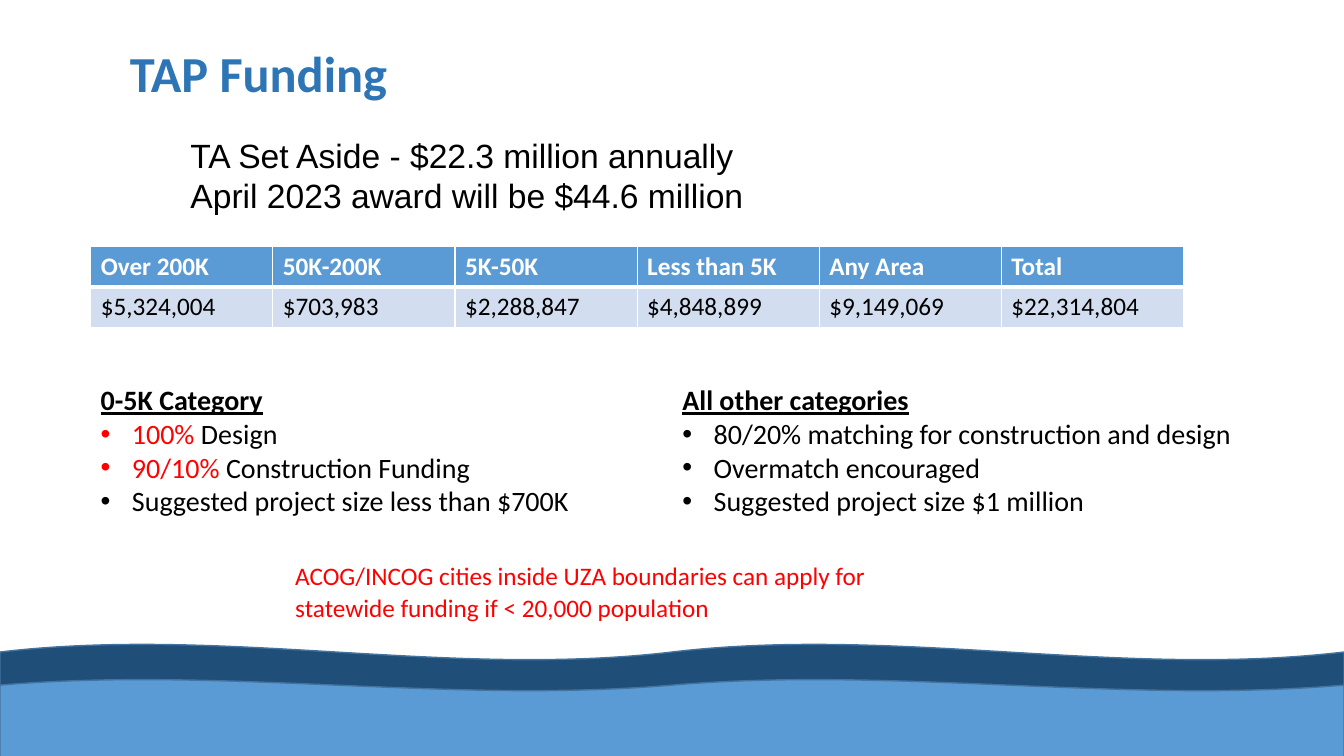
from pptx import Presentation
from pptx.dml.color import RGBColor as Rgb
from pptx.enum.shapes import MSO_SHAPE as Shape
from pptx.enum.text import MSO_ANCHOR as Anchor, MSO_AUTO_SIZE as Auto
from pptx.oxml import parse_xml
from pptx.oxml.ns import nsdecls
from pptx.util import Inches, Pt

COLORS = {
    "navy": "1F4E79", "blue": "5B9BD5", "edge": "43739E", "title": "2E75B6",
    "pale": "D2DEEF", "white": "FFFFFF", "black": "000000", "red": "FF0000",
}


class Board:
    def __init__(self, slide, face="Calibri"):
        self.slide = slide
        self.face = face

    def color(self, name):
        return Rgb.from_string(COLORS[name])

    def style(self, font, size, tint=None, bold=False, under=False, face=None):
        font.name = face or self.face
        font.size = Pt(size)
        font.bold = bold
        font.underline = under
        if tint:
            font.color.rgb = self.color(tint)

    def wave(self, top, high, fill):
        wave = self.slide.shapes.add_shape(
            Shape.DOUBLE_WAVE, 0, Inches(top), Inches(13.33), Inches(high))
        wave.shadow.inherit = False
        wave.fill.solid()
        wave.fill.fore_color.rgb = self.color(fill)
        wave.line.color.rgb = self.color("edge")
        wave.line.width = Pt(1)

    def text(self, box, lines, size, tint="black", wrap=True, **look):
        frame = self.slide.shapes.add_textbox(*map(Inches, box)).text_frame
        frame.word_wrap = wrap
        frame.auto_size = Auto.SHAPE_TO_FIT_TEXT
        for i, line in enumerate(lines):
            para = frame.add_paragraph() if i else frame.paragraphs[0]
            para.text = line
            self.style(para.font, size, tint, **look)
        return frame

    def bullet(self, frame, parts, size):
        para = frame.add_paragraph()
        props = para._p.get_or_add_pPr()
        props.set("marL", str(Inches(0.31)))
        props.set("indent", str(Inches(-0.31)))
        for mark in ('buFont typeface="Arial"', 'buChar char="•"'):
            props.append(parse_xml(f'<a:{mark} {nsdecls("a")}/>'))
        self.style(para.font, size)
        for words, tint in parts:
            run = para.add_run()
            run.text = words
            run.font.color.rgb = self.color(tint)

    def list(self, box, head, items, size=20):
        frame = self.text(box, [head], size, wrap=False, bold=True, under=True)
        for parts in items:
            self.bullet(frame, parts, size)

    def border(self, cell, **widths):
        props = cell._tc.get_or_add_tcPr()
        for side in "LRTB":
            width = Pt(widths.get(side, 1))
            props.append(parse_xml(
                f'<a:ln{side} {nsdecls("a")} w="{width}"><a:solidFill>'
                f'<a:srgbClr val="{COLORS["white"]}"/></a:solidFill></a:ln{side}>'))

    def table(self, box, rows):
        looks = [("blue", "white", True, {"B": 3}), ("pale", "black", False, {"T": 3})]
        grid = self.slide.shapes.add_table(
            len(rows), len(rows[0]), *map(Inches, box)).table
        for r, (row, look) in enumerate(zip(rows, looks)):
            fill, tint, bold, widths = look
            for c, words in enumerate(row):
                cell = grid.cell(r, c)
                self.border(cell, **widths)
                cell.fill.solid()
                cell.fill.fore_color.rgb = self.color(fill)
                cell.text = words
                self.style(cell.text_frame.paragraphs[0].font, 18, tint, bold)


def main():
    deck = Presentation()
    deck.slide_width, deck.slide_height = Inches(13.33), Inches(7.5)
    board = Board(deck.slides.add_slide(deck.slide_layouts[6]))

    board.wave(6.39, 1.26, "navy")
    board.wave(6.74, 0.91, "blue")

    award = board.text(
        (1.79, 1.28, 7.08, 0.91),
        ["TA Set Aside - $22.3 million annually",
         "April 2023 award will be $44.6 million"], 24, face="Arial")
    award.vertical_anchor = Anchor.MIDDLE

    board.table((0.9, 2.44, 10.84, 0.81), [
        ["Over 200K", "50K-200K", "5K-50K", "Less than 5K", "Any Area", "Total"],
        ["$5,324,004", "$703,983", "$2,288,847", "$4,848,899", "$9,149,069",
         "$22,314,804"],
    ])

    board.text((1.19, 0.37, 2.78, 0.71), ["TAP Funding"], 36, "title",
               wrap=False, bold=True)

    board.list((0.9, 3.75, 4.89, 1.45), "0-5K Category", [
        [("100%", "red"), (" Design", "black")],
        [("90/10%", "red"), (" Construction Funding", "black")],
        [("Suggested project size less than $700K", "black")],
    ])
    board.list((6.67, 3.75, 5.7, 1.45), "All other categories", [
        [("80/20% matching for construction and design", "black")],
        [("Overmatch encouraged", "black")],
        [("Suggested project size $1 million", "black")],
    ])

    note = board.text(
        (2.83, 5.49, 6.67, 0.73),
        ["ACOG/INCOG cities inside UZA boundaries can apply for "
         "statewide funding if < 20,000 population"], 18, "red")
    note.paragraphs[0].line_spacing = 1.07
    note.paragraphs[0].space_after = Pt(8)

    deck.save("out.pptx")


if __name__ == "__main__":
    main()
